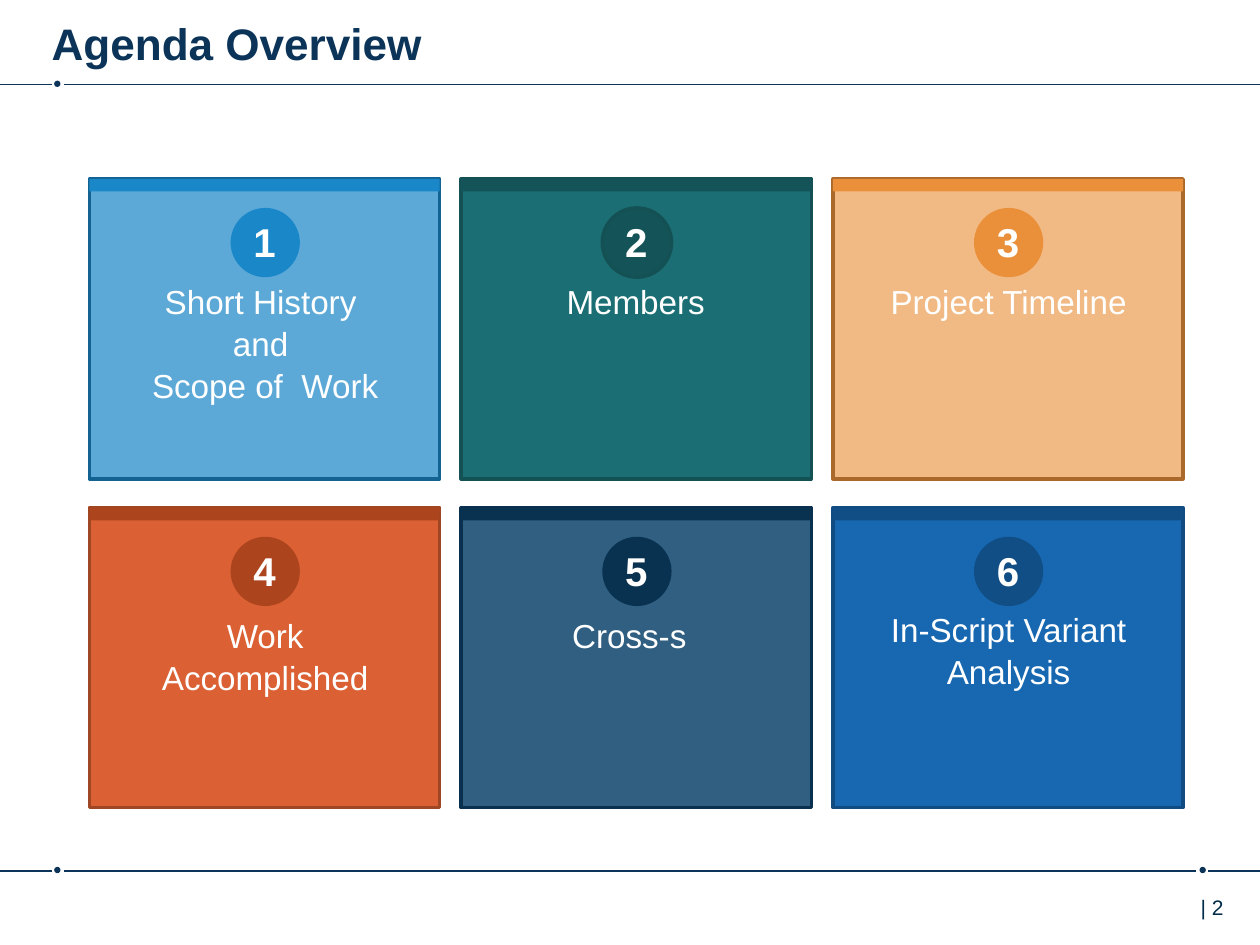
from lxml.etree import SubElement
from pptx import Presentation
from pptx.dml.color import RGBColor
from pptx.enum.shapes import MSO_CONNECTOR, MSO_SHAPE
from pptx.enum.text import MSO_ANCHOR, PP_ALIGN
from pptx.oxml.ns import qn
from pptx.util import Emu, Pt

PX = 9144  # 100 px to the inch
FONT = "Arial"
COLORS = {
    "navy": "0C3458", "title": "0B3458", "footer": "002B49", "white": "FFFFFF",
    "sky": "1A87C9", "sky_edge": "126292",
    "teal": "1B6F74", "teal_dark": "145357", "teal_edge": "135154",
    "amber": "EA903A", "amber_edge": "AA692A",
    "rust": "DB6033", "rust_dark": "AC441E", "rust_edge": "9F4625",
    "slate": "0D436C", "slate_dark": "093251", "slate_edge": "09304E",
    "blue": "1768B1", "blue_dark": "114E85", "blue_edge": "104B81",
}

# Label, body, body opacity, accent, edge, label offset from the card corner
CARDS = [
    ("Short History \nand \nScope of  Work", "sky", 71, "sky", "sky_edge", (26, 75)),
    ("Members", "teal", 100, "teal_dark", "teal_edge", (25, 75)),
    ("Project Timeline", "amber", 62, "amber", "amber_edge", (26, 75)),
    ("Work Accomplished", "rust", 100, "rust_dark", "rust_edge", (26, 79)),
    ("Cross-s", "slate", 85, "slate_dark", "slate_edge", (20, 79)),
    ("In-Script Variant Analysis", "blue", 100, "blue_dark", "blue_edge", (26, 74)),
]
COLUMNS = 3
CARD_WIDTH, CARD_HEIGHT = 278, 238
CARD_LEFT, CARD_TOP = 71, 142
STEP_X, STEP_Y = 295, 261
BADGE = 55


def color(name):
    return RGBColor.from_string(COLORS[name])


def lengths(*values):
    return [Emu(value * PX) for value in values]


class SlideBuilder:
    def __init__(self, page):
        self.page = page

    def shape(self, kind, at, fill, opacity=100, edge=None):
        shape = self.page.shapes.add_shape(kind, *lengths(*at))
        shape.shadow.inherit = False
        shape.fill.solid()
        shape.fill.fore_color.rgb = color(fill)
        if opacity < 100:
            tone = shape.fill._xPr.find(qn("a:solidFill"))[0]
            SubElement(tone, qn("a:alpha")).set("val", str(opacity * 1000))
        if edge:
            shape.line.color.rgb = color(edge)
            shape.line.width = Pt(2)
        else:
            shape.line.fill.background()

    def line(self, start, end, y):
        line = self.page.shapes.add_connector(
            MSO_CONNECTOR.STRAIGHT, *lengths(start, y, end, y))
        line.line.color.rgb = color("navy")
        line.line.width = Pt(1)
        SubElement(line._element.spPr, qn("a:effectLst"))

    def rule(self, y, segments, dots):
        for start, end in segments:
            self.line(start, end, y)
        for left in dots:
            self.shape(MSO_SHAPE.OVAL, (left, y - 3, 5, 5), "navy")

    def format_text(self, para, size, tone, bold=False):
        for span in para.runs:
            span.font.name = FONT
            span.font.size = Pt(size)
            span.font.bold = bold
            span.font.color.rgb = color(tone)

    def text(self, at, text, size, tone="white", bold=False,
             align=PP_ALIGN.CENTER, spacing=1.05):
        box = self.page.shapes.add_textbox(*lengths(*at))
        box.text_frame.word_wrap = True
        para = box.text_frame.paragraphs[0]
        para.text = text
        para.alignment = align
        para.line_spacing = spacing
        self.format_text(para, size, tone, bold)

    def title(self, at, text):
        box = self.page.shapes.title
        box.left, box.top, box.width, box.height = lengths(*at)
        frame = box.text_frame
        frame.text = text
        frame.margin_left = frame.margin_right = 0
        frame.margin_top, frame.margin_bottom = lengths(8, 2)
        frame.vertical_anchor = MSO_ANCHOR.TOP
        frame.paragraphs[0].alignment = PP_ALIGN.LEFT
        self.format_text(frame.paragraphs[0], 25.2, "title", True)

    def card(self, index, label, body, opacity, accent, edge, offset):
        row, column = divmod(index, COLUMNS)
        left = CARD_LEFT + column * STEP_X
        top = CARD_TOP + row * STEP_Y
        # Body and top bar
        self.shape(MSO_SHAPE.RECTANGLE, (left, top, CARD_WIDTH, CARD_HEIGHT),
                   body, opacity, edge)
        self.shape(MSO_SHAPE.RECTANGLE, (left, top, CARD_WIDTH, 10), accent)
        # Numbered badge; the teal one is outlined
        self.shape(MSO_SHAPE.OVAL, (left + 112, top + 23, BADGE, BADGE), accent,
                   edge=edge if body == "teal" else None)
        self.text((left, top + 24, CARD_WIDTH, 49), str(index + 1), 23, bold=True)
        # Label
        self.text((left + offset[0], top + offset[1], 227, 118), label, 19)


def main():
    deck = Presentation()
    deck.slide_width, deck.slide_height = lengths(1000, 750)
    page = deck.slides.add_slide(deck.slide_layouts[5])
    builder = SlideBuilder(page)

    # Header and footer
    builder.title((41, 5, 876, 49), "Agenda Overview")
    builder.rule(67, [(0, 41), (51, 1000)], [43])
    builder.rule(691, [(0, 41), (51, 949), (959, 1000)], [43, 952])
    builder.text((943, 705, 55, 40), "| 2", 12, "footer",
                 align=PP_ALIGN.LEFT, spacing=1.0)

    # Agenda cards
    for index, card in enumerate(CARDS):
        builder.card(index, *card)

    deck.save("out.pptx")


if __name__ == "__main__":
    main()
